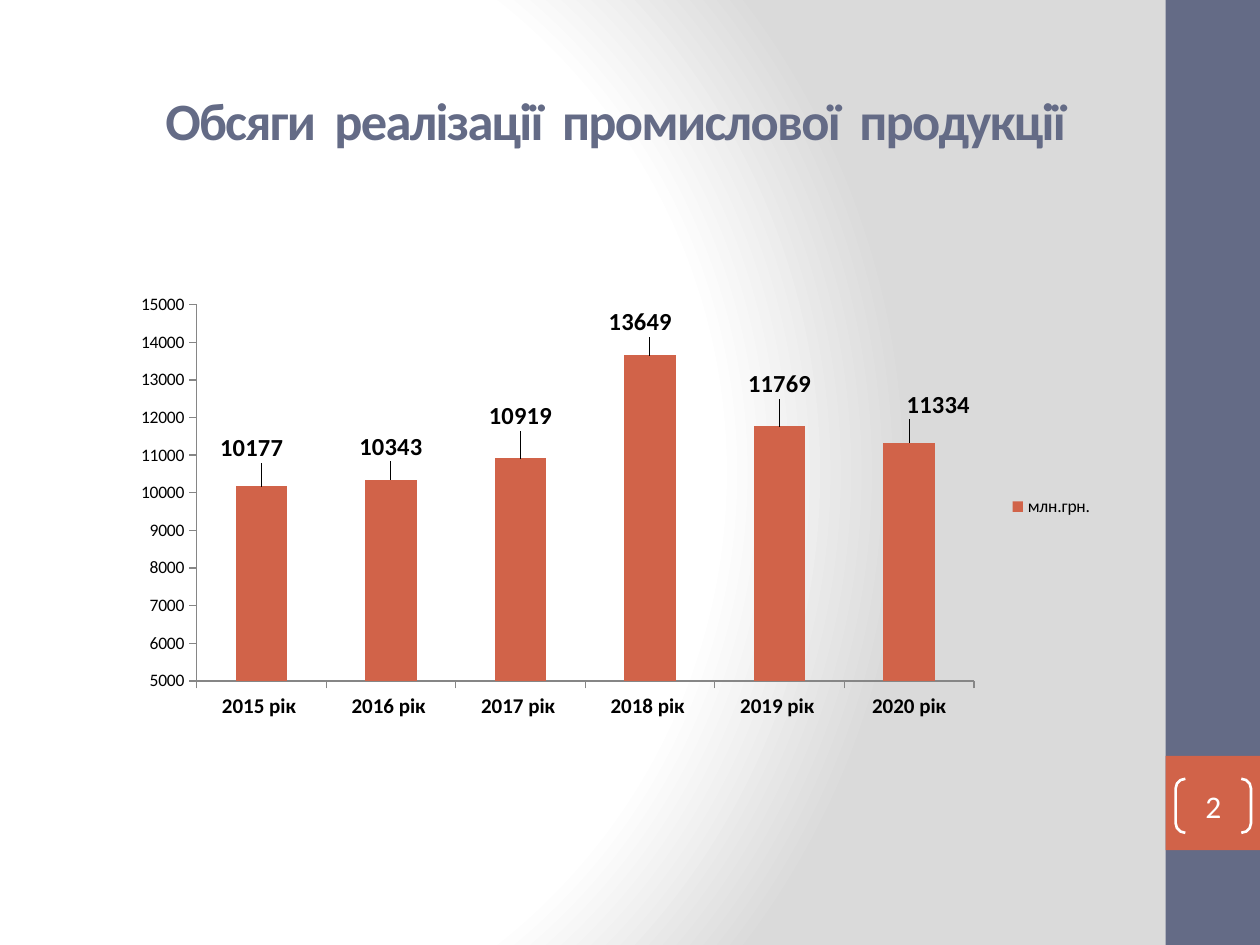
from lxml import etree
from pptx import Presentation
from pptx.chart.data import CategoryChartData
from pptx.dml.color import RGBColor
from pptx.enum.chart import XL_CHART_TYPE, XL_LABEL_POSITION, XL_LEGEND_POSITION, XL_TICK_MARK
from pptx.enum.shapes import MSO_SHAPE
from pptx.enum.text import MSO_ANCHOR, MSO_AUTO_SIZE, PP_ALIGN
from pptx.oxml import parse_xml
from pptx.oxml.ns import nsdecls, qn
from pptx.util import Cm, Pt

COLUMNS = XL_CHART_TYPE.COLUMN_CLUSTERED
OUTSIDE_END = XL_LABEL_POSITION.OUTSIDE_END
LEGEND_RIGHT = XL_LEGEND_POSITION.RIGHT
TICK_OUT, TICK_NONE = XL_TICK_MARK.OUTSIDE, XL_TICK_MARK.NONE
RECT, BRACKETS = MSO_SHAPE.RECTANGLE, MSO_SHAPE.DOUBLE_BRACKET
MIDDLE, CENTER, NO_FIT = MSO_ANCHOR.MIDDLE, PP_ALIGN.CENTER, MSO_AUTO_SIZE.NONE

SLATE, RUST, WHITE, BLACK, GREY = "646B86", "D16349", "FFFFFF", "000000", "868686"
FONT = "Calibri"

CATEGORIES = [f"{year} рік " for year in range(2015, 2020)] + ["2020 рік"]
VALUES = [10177, 10343, 10919, 13649, 11769, 11334]
# Label shifts from the bar tops, as fractions of the chart size
LABEL_SHIFTS = [(-0.01, -0.04), (0, -0.03), (0, -0.05),
                (-0.01, -0.03), (0, -0.05), (0.03, -0.04)]


def rgb(hex_string):
    return RGBColor.from_string(hex_string)


def set_font(font, size, color=BLACK, bold=False):
    font.name, font.size, font.bold = FONT, Pt(size), bold
    font.color.rgb = rgb(color)


def manual_layout(**values):
    """Return a c:layout element; values are its children in schema order."""
    layout = parse_xml(f"<c:layout {nsdecls('c')}><c:manualLayout/></c:layout>")
    for name, value in values.items():
        etree.SubElement(layout[0], qn(f"c:{name}")).set("val", str(value))
    return layout


class SlideBuilder:
    def __init__(self, prs):
        self.s = prs.slides.add_slide(prs.slide_layouts[5])

    def background(self, stops):
        gs = "".join(f'<a:gs pos="{pos * 1000}"><a:srgbClr val="{color}"/></a:gs>'
                     for pos, color in stops)
        bg = parse_xml(
            f"<p:bg {nsdecls('p', 'a')}><p:bgPr><a:gradFill rotWithShape=\"1\">"
            f"<a:gsLst>{gs}</a:gsLst><a:path path=\"circle\">"
            '<a:fillToRect l="20000" t="50000" r="100000" b="50000"/></a:path>'
            "</a:gradFill><a:effectLst/></p:bgPr></p:bg>")
        self.s.element.cSld.insert(0, bg)

    def shape(self, kind, x, y, w, h, fill=None, line=None):
        sp = self.s.shapes.add_shape(kind, Cm(x), Cm(y), Cm(w), Cm(h))
        sp.shadow.inherit = False
        if fill:
            sp.fill.solid()
            sp.fill.fore_color.rgb = rgb(fill)
        else:
            sp.fill.background()
        if line:
            sp.line.color.rgb = rgb(line)
            sp.line.width = Pt(1.5)
        else:
            sp.line.fill.background()
        return sp

    def title(self, text, x, y, w, h):
        sp = self.s.shapes.title
        sp.left, sp.top, sp.width, sp.height = Cm(x), Cm(y), Cm(w), Cm(h)
        tf = sp.text_frame
        tf.auto_size, tf.vertical_anchor = NO_FIT, MIDDLE
        p = tf.paragraphs[0]
        p.alignment = CENTER
        r = p.add_run()
        r.text = text
        set_font(r.font, 30, SLATE, True)
        r.font._element.set("spc", "-100")

    def page_number(self, number, x, y, w, h):
        sp = self.shape(BRACKETS, x, y, w, h, line=WHITE)
        sp.adjustments[0] = 0.18
        tf = sp.text_frame
        tf.margin_left = tf.margin_right = tf.margin_top = tf.margin_bottom = 0
        tf.vertical_anchor = MIDDLE
        p = tf.paragraphs[0]
        p.text, p.alignment = str(number), CENTER
        set_font(p.font, 18, WHITE)

    def column_chart(self, name, categories, values, shifts, x, y, w, h):
        data = CategoryChartData()
        data.categories = categories
        data.add_series(name, values)
        chart = self.s.shapes.add_chart(COLUMNS, Cm(x), Cm(y), Cm(w), Cm(h), data).chart
        set_font(chart.font, 10)
        chart.has_title = False
        chart.has_legend = True
        chart.legend.position = LEGEND_RIGHT
        chart.legend.include_in_layout = False

        for axis in (chart.category_axis, chart.value_axis):
            axis.major_tick_mark, axis.minor_tick_mark = TICK_OUT, TICK_NONE
            axis.has_major_gridlines = False
            axis.format.line.color.rgb = rgb(GREY)
        set_font(chart.category_axis.tick_labels.font, 12, bold=True)
        axis = chart.value_axis
        axis.minimum_scale, axis.maximum_scale, axis.major_unit = 5000, 15000, 1000

        plot = chart.plots[0]
        plot.gap_width, plot.vary_by_categories = 150, False
        series = plot.series[0]
        series.format.fill.solid()
        series.format.fill.fore_color.rgb = rgb(RUST)
        series.data_labels.show_value = True
        set_font(series.data_labels.font, 14, bold=True)
        for i, (dx, dy) in enumerate(shifts):
            label = series.points[i].data_label
            set_font(label.font, 14, bold=True)
            label.position = OUTSIDE_END
            idx = series._element.findall(".//" + qn("c:dLbl"))[i].find(qn("c:idx"))
            idx.addnext(manual_layout(x=dx, y=dy))

        area = chart._chartSpace.find(".//" + qn("c:plotArea"))
        for old in area.findall(qn("c:layout")):
            area.remove(old)
        area.insert(0, manual_layout(layoutTarget="inner", xMode="edge", yMode="edge",
                                     x=0.065, y=0.047, w=0.799, h=0.844))


def main():
    prs = Presentation()
    prs.slide_width, prs.slide_height = Cm(25.4), Cm(19.05)
    slide = SlideBuilder(prs)
    slide.background([(0, WHITE), (75, WHITE), (100, "DADADA")])
    slide.shape(RECT, 23.5, 0, 1.9, 19.05, SLATE)
    slide.shape(RECT, 23.5, 15.24, 1.9, 1.9, RUST)
    slide.title("Обсяги  реалізації  промислової  продукції ", 1.93, 1.32, 21.16, 2.16)
    slide.page_number(2, 23.7, 15.7, 1.52, 1.09)
    slide.column_chart("млн.грн.", CATEGORIES, VALUES, LABEL_SHIFTS,
                       2.69, 5.72, 19.61, 8.99)
    prs.save("out.pptx")


if __name__ == "__main__":
    main()
